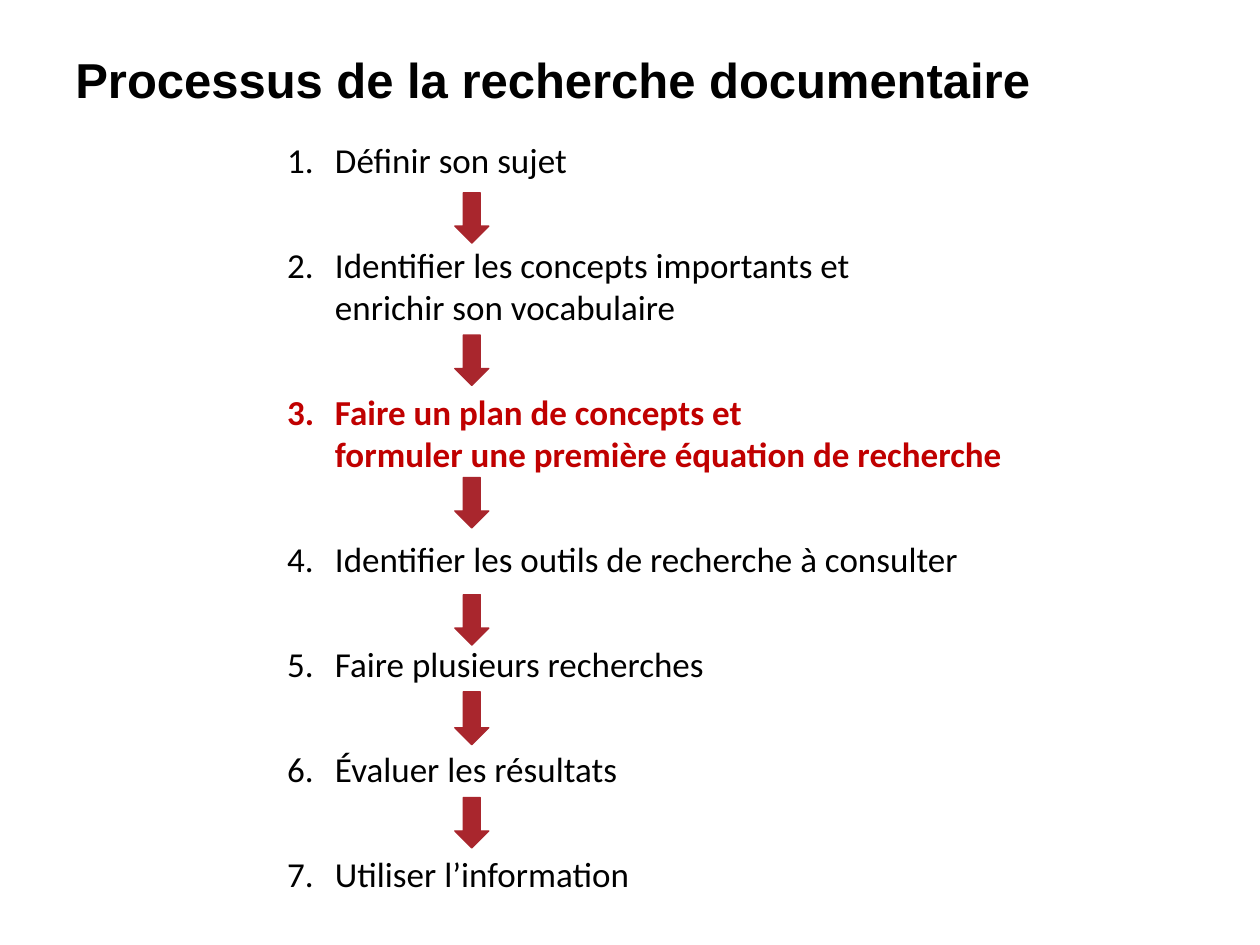
import pptx
import pptx.util
import pptx.dml.color
import pptx.enum.shapes
import pptx.enum.text
import lxml.etree

TITLE = "Processus de la recherche documentaire"
STEPS = [
    "Définir son sujet",
    "Identifier les concepts importants et \venrichir son vocabulaire",
    "Faire un plan de concepts et \vformuler une première équation de recherche",
    "Identifier les outils de recherche à consulter",
    "Faire plusieurs recherches",
    "Évaluer les résultats",
    "Utiliser l’information",
]
CURRENT_STEP = 3
ARROWS = [(1.53, 0.4), (2.66, 0.4), (3.79, 0.4), (4.72, 0.4), (5.49, 0.42), (6.33, 0.4)]
ARROW_LEFT, ARROW_WIDTH = 3.61, 0.27
BLACK, HIGHLIGHT, ARROW_RED = "000000", "C00000", "A9262D"

inches = pptx.util.Inches


def color(value):
    return pptx.dml.color.RGBColor.from_string(value)


def set_font(paragraph, name, size, value, bold):
    font = paragraph.font
    font.name, font.size, font.bold = name, pptx.util.Pt(size), bold
    font.color.rgb = color(value)


def add_text(slide, *box):
    frame = slide.shapes.add_textbox(*map(inches, box)).text_frame
    frame.word_wrap = True
    return frame


def number(paragraph, indent, hanging):
    properties = paragraph._p.get_or_add_pPr()
    properties.set("marL", str(inches(indent)))
    properties.set("indent", str(-inches(hanging)))
    bullet = lxml.etree.SubElement(properties, pptx.oxml.ns.qn("a:buAutoNum"))
    bullet.set("type", "arabicPeriod")


presentation = pptx.Presentation()
presentation.slide_width, presentation.slide_height = inches(10), inches(7.5)
slide = presentation.slides.add_slide(presentation.slide_layouts[6])

heading = add_text(slide, 0.5, 0, 9, 1.25)
heading.vertical_anchor = pptx.enum.text.MSO_ANCHOR.MIDDLE
heading.text = TITLE
set_font(heading.paragraphs[0], "Arial", 28, BLACK, True)

process = add_text(slide, 1.77, 1.05, 6.91, 6.27)
process.text = "\n".join(STEPS).replace("\v", "\v")
for position, step in enumerate(process.paragraphs, 1):
    current = position == CURRENT_STEP
    step.space_after = pptx.util.Pt(36)
    number(step, 0.79, 0.38)
    set_font(step, "Calibri", 20, HIGHLIGHT if current else BLACK, current)

for top, height in ARROWS:
    arrow = slide.shapes.add_shape(
        pptx.enum.shapes.MSO_SHAPE.DOWN_ARROW,
        *map(inches, (ARROW_LEFT, top, ARROW_WIDTH, height)))
    arrow.shadow.inherit = False
    arrow.fill.solid()
    arrow.fill.fore_color.rgb = color(ARROW_RED)
    arrow.line.color.rgb = color(ARROW_RED)
    arrow.line.width = pptx.util.Pt(0.75)

presentation.save("out.pptx")
